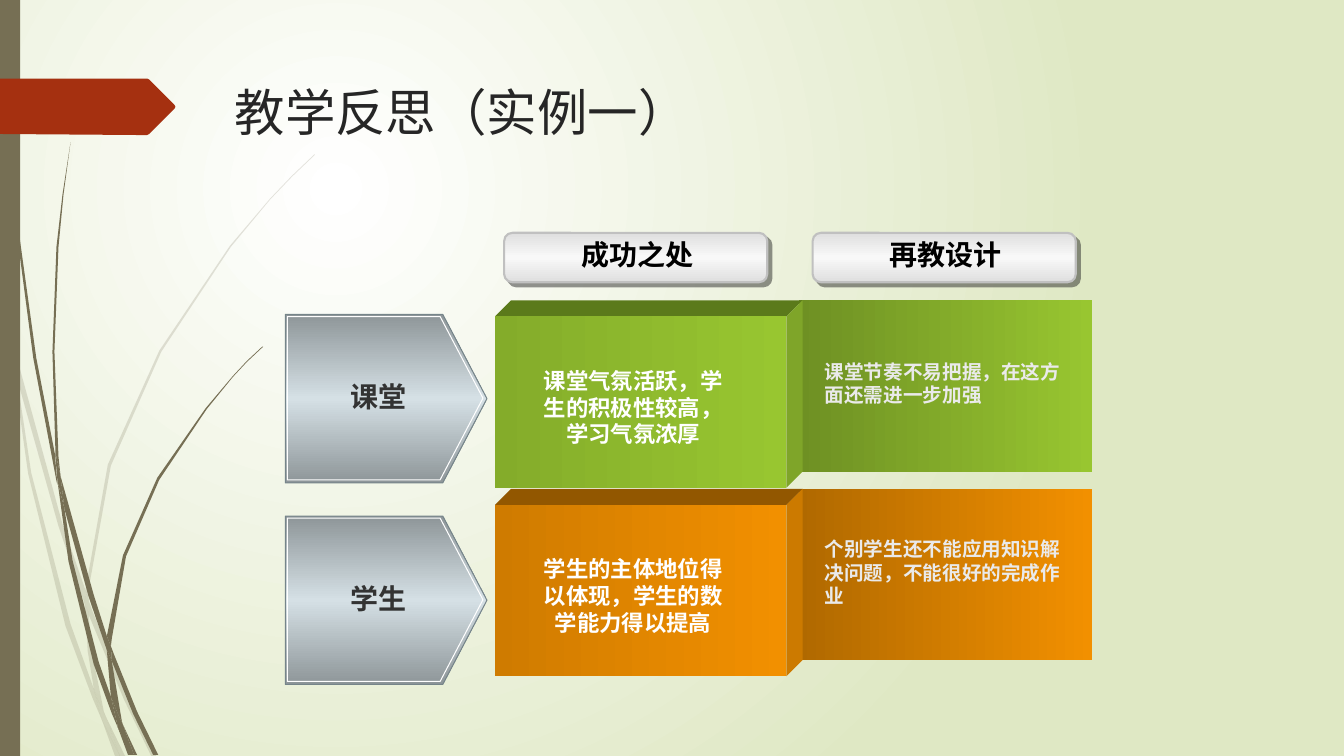
import pptx
import pptx.dml.color
import pptx.enum.shapes
import pptx.enum.text
import pptx.oxml
import pptx.oxml.ns
import pptx.util
import lxml.etree

Inches = pptx.util.Inches
SHAPE = pptx.enum.shapes.MSO_SHAPE
ALIGN = pptx.enum.text.PP_ALIGN
qn = pptx.oxml.ns.qn

COLORS = {
    "white": "FFFFFF", "black": "000000", "cream": "DFE8C4", "stem": "766F54", "red": "A53010",
    "title": "262626", "label": "333333", "pale": "EAEAEA",
    "button_edge": "DFDFDF", "button_mid": "F8F8F8", "button_line": "C0C0C0", "shadow": "292929",
    "steel_edge": "8E9699", "steel_mid": "D5E0E5", "steel_line": "76858A",
    "green": "98C630", "green_front": "84AC2A", "green_back": "6E9023",
    "green_top": "5B7A1B", "green_side": "7FA529",
    "orange": "F29000", "orange_front": "CF7B00", "orange_back": "B06900",
    "orange_top": "925700", "orange_side": "CC7A00",
}

PALE_STEMS = [
    [11, 350, 9, 322, 0, 282, 0, 299, 10, 344],
    [58, 522, 84, 599, 85, 586, 62, 520, 14, 345, 17, 376],
    [92, 607, 88, 596, 88, 610, 123, 694, 150, 750, 155, 750, 127, 692],
    [119, 750, 124, 750, 105, 711],
    [93, 683, 70, 619, 31, 469, 17, 376, 11, 350, 28, 470, 65, 621, 92, 693, 101, 714, 99, 707],
    [84, 599, 87, 646, 93, 683, 96, 692, 105, 711, 103, 706, 91, 646, 88, 610, 88, 608],
    [88, 584, 110, 462, 160, 349, 229, 245, 268, 198, 290, 175, 312, 154, 312, 153, 289, 175,
     268, 197, 228, 244, 158, 348, 107, 461, 85, 584, 85, 586, 88, 596],
    [101, 714, 114, 750, 119, 750],
    [88, 608, 88, 610, 88, 596, 85, 586, 84, 599],
    [96, 692, 93, 683, 99, 707, 101, 714, 119, 750, 105, 711],
]

DARK_STEMS = [
    [7, 110, 17, 233, 33, 355, 56, 477, 57, 481, 55, 457, 55, 453, 36, 355, 19, 232, 8, 109,
     5, 48, 4, 0, 3, 0, 4, 48],
    [88, 592, 106, 645, 106, 633, 106, 631, 93, 590, 60, 472, 64, 505],
    [113, 649, 110, 641, 111, 656, 132, 708, 152, 749, 157, 749, 136, 706],
    [110, 691, 98, 657, 72, 556, 64, 505, 57, 477, 68, 557, 93, 659, 111, 708, 117, 722, 116, 717],
    [60, 472, 58, 453, 54, 349, 58, 245, 63, 193, 70, 141, 62, 193, 56, 245, 52, 349, 55, 449],
    [133, 749, 136, 749, 122, 719],
    [57, 477, 64, 505, 60, 472, 55, 449, 55, 453],
    [111, 633, 125, 552, 158, 476, 205, 406, 231, 374, 245, 359, 261, 344, 260, 344, 245, 358,
     231, 373, 204, 405, 156, 474, 122, 551, 106, 631, 110, 641],
    [117, 722, 127, 749, 131, 749],
    [106, 645, 110, 691, 116, 706, 122, 719, 121, 716, 111, 656, 109, 651],
    [106, 645, 109, 651, 111, 656, 110, 641, 106, 631, 106, 633],
    [116, 706, 110, 691, 116, 717, 117, 722, 130, 749, 133, 749, 122, 719],
]

RED_ARROW = [173, 108, 148, 133, 146, 134, 136, 134, 0, 133, 0, 78, 146, 78, 148, 79, 173, 104, 174, 106]


def rgb(name):
    return pptx.dml.color.RGBColor.from_string(COLORS[name])


def sub(parent, tag, **attrs):
    return lxml.etree.SubElement(parent, qn(tag), {k: str(v) for k, v in attrs.items()})


class SlideBuilder:
    def __init__(self, prs, font, title_font):
        self.s = prs.slides.add_slide(prs.slide_layouts[6])
        self.font = font
        self.title_font = title_font

    def gradient(self, owner, fill, names, angle=None):
        fill.gradient()
        grad = owner.find(".//" + qn("a:gradFill"))
        for child in list(grad):
            grad.remove(child)
        stops = sub(grad, "a:gsLst")
        for i, name in enumerate(names):
            gs = sub(stops, "a:gs", pos=100000 * i // (len(names) - 1))
            sub(gs, "a:srgbClr", val=COLORS[name])
        if angle is None:
            radial = sub(grad, "a:path", path="circle")
            sub(radial, "a:fillToRect", l=50000, t=50000, r=100000, b=100000)
        else:
            sub(grad, "a:lin", ang=angle * 60000, scaled=0)

    def background(self, *names):
        self.gradient(self.s.element, self.s.background.fill, names)

    def style(self, sp, fill=None, line=None, width=0.75, angle=0):
        sp.shadow.inherit = False
        if fill is None:
            sp.fill.background()
        elif isinstance(fill, str):
            sp.fill.solid()
            sp.fill.fore_color.rgb = rgb(fill)
        else:
            self.gradient(sp.element, sp.fill, fill, angle)
        if line:
            sp.line.color.rgb = rgb(line)
            sp.line.width = pptx.util.Pt(width)
        else:
            sp.line.fill.background()
        return sp

    def shape(self, kind, x, y, w, h, adj=None, **look):
        sp = self.s.shapes.add_shape(kind, Inches(x), Inches(y), Inches(w), Inches(h))
        if adj is not None:
            sp.adjustments[0] = adj
        return self.style(sp, **look)

    def outline(self, points, fill, alpha=None):
        pts = [(Inches(x), Inches(y)) for x, y in points]
        builder = self.s.shapes.build_freeform(*pts[0])
        builder.add_line_segments(pts[1:], close=True)
        sp = self.style(builder.convert_to_shape(), fill=fill)
        if alpha:
            color = sp.element.spPr.find(qn("a:solidFill")).find(qn("a:srgbClr"))
            sub(color, "a:alpha", val=alpha * 1000)

    def hundredths(self, row, fill, alpha=None):
        self.outline([(x / 100, y / 100) for x, y in zip(row[::2], row[1::2])], fill, alpha)

    def text(self, text, x, y, w, h, size=20, color="black", bold=True, align=ALIGN.CENTER, font=None):
        sp = self.s.shapes.add_textbox(Inches(x), Inches(y), Inches(w), Inches(h))
        tf = sp.text_frame
        tf.word_wrap = True
        p = tf.paragraphs[0]
        p.alignment = align
        r = p.add_run()
        r.text = text
        r.font.size = pptx.util.Pt(size)
        r.font.bold = bold
        r.font.color.rgb = rgb(color)
        r.font.name = font or self.font
        sub(r.font._element, "a:ea", typeface=r.font.name)

    def button(self, text, x, y):
        sp = self.shape(SHAPE.ROUNDED_RECTANGLE, x, y, 2.61, 0.49, adj=0.167, line="button_line",
                        width=1.5, fill=("button_edge", "button_mid", "button_edge"), angle=90)
        effects = sp.element.spPr.find(qn("a:effectLst"))
        shadow = sub(effects, "a:outerShdw", dist=pptx.util.Pt(4.2), dir=45 * 60000,
                     algn="ctr", rotWithShape=0)
        sub(sub(shadow, "a:srgbClr", val=COLORS["shadow"]), "a:alpha", val=50000)
        self.text(text, x + 0.09, y, 2.46, 0.43)

    def pentagon(self, text, y):
        steel = ("steel_edge", "steel_mid", "steel_edge")
        self.shape(SHAPE.PENTAGON, 2.83, y, 2, 1.67, adj=0.262, fill=steel, line="steel_line", angle=90)
        self.shape(SHAPE.PENTAGON, 2.85, y + 0.02, 1.94, 1.62, adj=0.262, line="white")
        self.text(text, 2.75, y + 0.6, 2.01, 0.43, color="label")

    def block(self, hue, y, success, redesign, redesign_drop, redesign_h):
        x, w, h, depth = 4.91, 2.89, 1.7, 0.16
        front, right = y + depth, x + w
        self.shape(SHAPE.RECTANGLE, 7.92, y, 2.91, h, fill=(hue + "_back", hue))
        self.outline([(x, front), (x + depth, y), (right + depth, y), (right, front)], hue + "_top")
        self.outline([(right, front), (right + depth, y), (right + depth, y + h), (right, front + h)],
                     hue + "_side")
        self.shape(SHAPE.RECTANGLE, x, front, w, h, fill=(hue + "_front", hue))
        self.text(success, 5.27, front + 0.45, 2.02, 0.9, size=16, color="white")
        self.text(redesign, 8.08, y + redesign_drop, 2.58, redesign_h, size=14, color="pale",
                  align=ALIGN.LEFT)


def main():
    prs = pptx.Presentation()
    prs.slide_width = Inches(13.33)
    prs.slide_height = Inches(7.5)
    b = SlideBuilder(prs, "Arial", "Noto Sans CJK SC")

    b.background("white", "cream")
    for row in PALE_STEMS:
        b.hundredths(row, "stem", alpha=20)
    for row in DARK_STEMS:
        b.hundredths(row, "stem")
    b.shape(SHAPE.RECTANGLE, 0, 0, 0.2, 7.5, fill="stem")
    b.hundredths(RED_ARROW, "red")
    b.text("教学反思（实例一）", 2.23, 0.76, 6.38, 0.95, size=36, color="title", bold=False,
           align=ALIGN.LEFT, font=b.title_font)

    for text, x in (("成功之处", 5), ("再教设计", 8.06)):
        b.button(text, x, 2.31)
    for text, y in (("课堂", 3.12), ("学生", 5.12)):
        b.pentagon(text, y)
    b.block("green", 2.98, "课堂气氛活跃，学生的积极性较高，学习气氛浓厚",
            "课堂节奏不易把握，在这方面还需进一步加强", 0.54, 0.57)
    b.block("orange", 4.85, "学生的主体地位得以体现，学生的数学能力得以提高",
            "个别学生还不能应用知识解决问题，不能很好的完成作业", 0.43, 0.81)
    prs.save("out.pptx")


if __name__ == "__main__":
    main()
